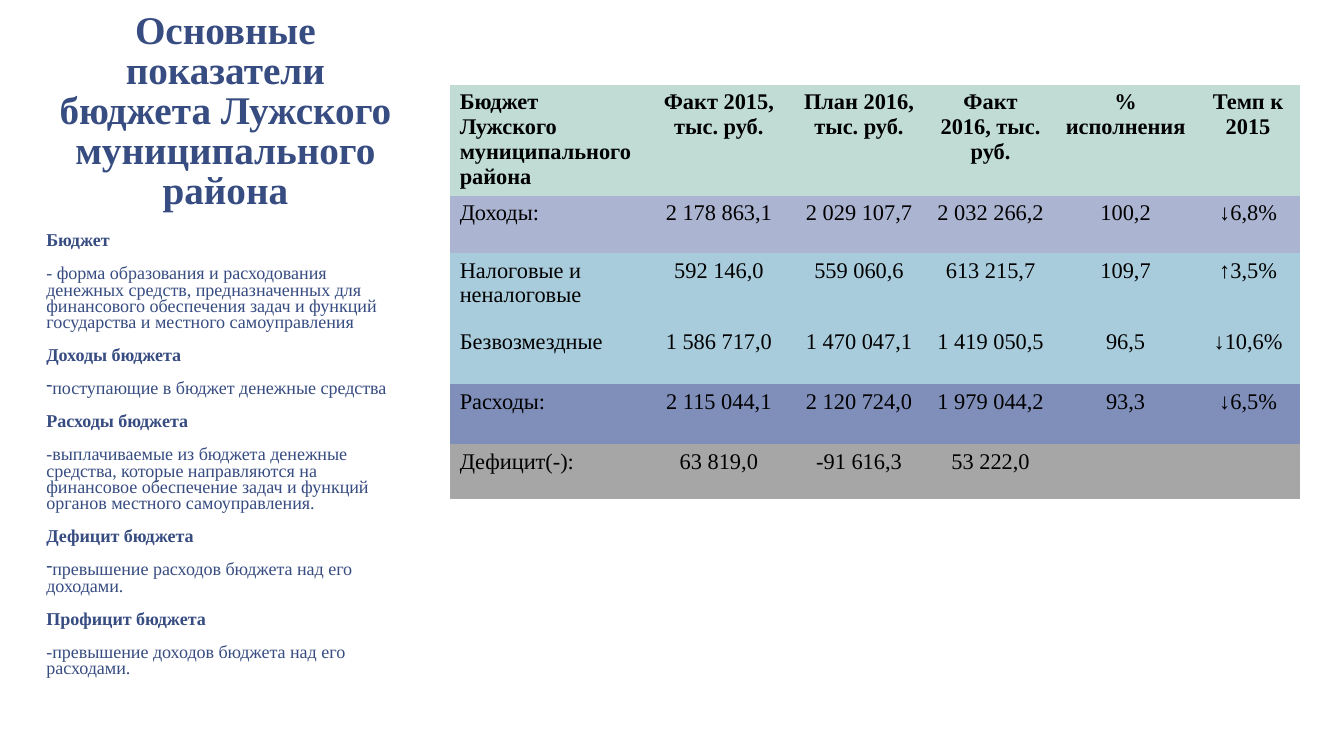
from lxml.etree import SubElement
from pptx import Presentation
from pptx.dml.color import RGBColor
from pptx.enum.text import MSO_ANCHOR, MSO_AUTO_SIZE, PP_ALIGN
from pptx.oxml.ns import qn
from pptx.util import Inches, Pt

FONT = "Times New Roman"
COLORS = {
    "heading": "374C81",
    "cell_text": "000000",
    "header": "C0DCD5",
    "income": "ABB4D1",
    "income_part": "A9CCDC",
    "expenses": "808EBA",
    "deficit": "A6A6A6",
}
PLAIN_TABLE_STYLE = "{2D5ABB26-0587-4C30-8999-92F81FD0307C}"

TITLE = "Основные показатели бюджета Лужского муниципального района"
DEFINITIONS = [
    ("Бюджет", "- форма образования и расходования денежных средств, предназначенных для "
     "финансового обеспечения задач и функций государства и местного самоуправления", False),
    ("Доходы бюджета", "поступающие в бюджет денежные средства", True),
    ("Расходы бюджета", "-выплачиваемые из бюджета денежные средства, которые направляются на "
     "финансовое обеспечение задач и функций органов местного самоуправления.", False),
    ("Дефицит бюджета", "превышение расходов бюджета над его доходами.", True),
    ("Профицит бюджета", "-превышение доходов бюджета над его расходами.", False),
]
COLUMN_WIDTHS = [1.95, 1.44, 1.34, 1.27, 1.41, 1.02]
BUDGET_ROWS = [
    ("header", 1.1, ["Бюджет Лужского муниципального района", "Факт 2015, тыс. руб.",
                     "План 2016, тыс. руб.", "Факт 2016, тыс. руб.", "% исполнения", "Темп к 2015"]),
    ("income", 0.57, ["Доходы:", "2 178 863,1", "2 029 107,7", "2 032 266,2", "100,2", "↓6,8%"]),
    ("income_part", 0.71, ["Налоговые и неналоговые", "592 146,0", "559 060,6", "613 215,7",
                           "109,7", "↑3,5%"]),
    ("income_part", 0.59, ["Безвозмездные", "1 586 717,0", "1 470 047,1", "1 419 050,5",
                           "96,5", "↓10,6%"]),
    ("expenses", 0.6, ["Расходы:", "2 115 044,1", "2 120 724,0", "1 979 044,2", "93,3", "↓6,5%"]),
    ("deficit", 0.54, ["Дефицит(-):", "63 819,0", "-91 616,3", "53 222,0", "", ""]),
]


def format_font(paragraph, size, color, bold):
    font = paragraph.font
    font.name = FONT
    font.size = Pt(size)
    font.bold = bold
    font.color.rgb = RGBColor.from_string(COLORS[color])


def format_frame(text_frame, anchor):
    text_frame.word_wrap = True
    text_frame.auto_size = MSO_AUTO_SIZE.NONE
    text_frame.vertical_anchor = anchor
    text_frame.margin_left = text_frame.margin_right = Inches(0.13)
    text_frame.margin_top = text_frame.margin_bottom = Inches(0.07)


def place_title(slide, left, top, width, height):
    title = slide.shapes.title
    title.left, title.top = Inches(left), Inches(top)
    title.width, title.height = Inches(width), Inches(height)
    format_frame(title.text_frame, MSO_ANCHOR.BOTTOM)
    title.text_frame.text = TITLE
    paragraph = title.text_frame.paragraphs[0]
    paragraph.alignment = PP_ALIGN.CENTER
    paragraph.line_spacing = 0.85
    format_font(paragraph, 28, "heading", True)


def add_definitions(slide, left, top, width, height):
    shape = slide.shapes.add_textbox(Inches(left), Inches(top), Inches(width), Inches(height))
    text_frame = shape.text_frame
    format_frame(text_frame, MSO_ANCHOR.TOP)
    lines = []
    for term, meaning, bulleted in DEFINITIONS:
        lines += [(term, True, False), (meaning, False, bulleted)]
    for index, (text, bold, bulleted) in enumerate(lines):
        paragraph = text_frame.add_paragraph() if index else text_frame.paragraphs[0]
        paragraph.text = text
        paragraph.line_spacing = 0.75
        paragraph.space_before = Pt(12 if index else 0)
        if bulleted:
            properties = paragraph._p.get_or_add_pPr()
            SubElement(properties, qn("a:buFontTx"))
            SubElement(properties, qn("a:buChar")).set("char", "-")
        format_font(paragraph, 12.9, "heading", bold)


def add_budget_table(slide, left, top):
    heights = [height for _, height, _ in BUDGET_ROWS]
    frame = slide.shapes.add_table(
        len(BUDGET_ROWS), len(COLUMN_WIDTHS), Inches(left), Inches(top),
        Inches(sum(COLUMN_WIDTHS)), Inches(sum(heights)))
    table = frame.table
    table.horz_banding = False
    table._tbl.tblPr.find(qn("a:tableStyleId")).text = PLAIN_TABLE_STYLE
    for column, width in zip(table.columns, COLUMN_WIDTHS):
        column.width = Inches(width)
    for row, (color, height, texts) in zip(table.rows, BUDGET_ROWS):
        row.height = Inches(height)
        for index, (cell, text) in enumerate(zip(row.cells, texts)):
            cell.fill.solid()
            cell.fill.fore_color.rgb = RGBColor.from_string(COLORS[color])
            cell.text = text
            paragraph = cell.text_frame.paragraphs[0]
            paragraph.alignment = PP_ALIGN.CENTER if index else PP_ALIGN.LEFT
            format_font(paragraph, 16, "cell_text", color == "header")


def main():
    presentation = Presentation()
    presentation.slide_width = Inches(13.33)
    presentation.slide_height = Inches(7.5)
    slide = presentation.slides.add_slide(presentation.slide_layouts[5])
    place_title(slide, 0.37, 0.13, 3.73, 2.05)
    add_budget_table(slide, 4.46, 0.84)
    add_definitions(slide, 0.33, 2.25, 3.81, 4.72)
    presentation.save("out.pptx")


if __name__ == "__main__":
    main()
